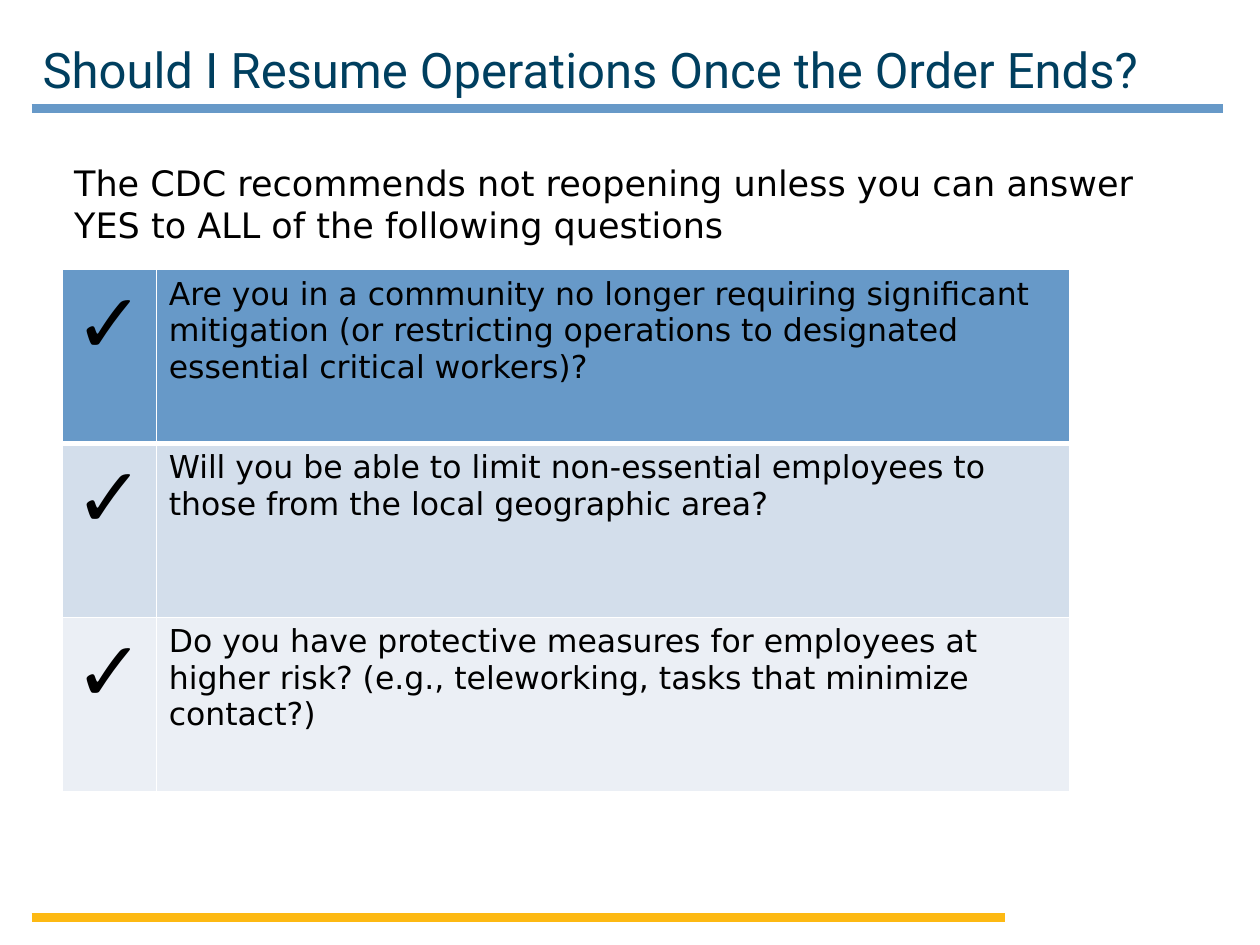
from typing import NamedTuple

from lxml import etree
from pptx import Presentation
from pptx import util as u
from pptx.dml.color import RGBColor
from pptx.enum import shapes, text
from pptx.oxml import ns

BLUE = "6799C8"
GOLD = "FDB913"
NAVY = "003F5F"
BLACK = "000000"
WHITE = "FFFFFF"


class Rule(NamedTuple):
    y: float
    end: float
    color: str


class Check(NamedTuple):
    words: str
    fill: str


RULES = [Rule(0.86, 9.71, BLUE), Rule(7.28, 7.98, GOLD)]
CHECKS = [
    Check("Are you in a community no longer requiring significant mitigation "
          "(or restricting operations to designated essential critical workers)?", BLUE),
    Check("Will you be able to limit non-essential employees to those from "
          "the local geographic area?", "D3DEEB"),
    Check("Do you have protective measures for employees at higher risk? "
          "(e.g., teleworking, tasks that minimize contact?)", "EBEFF5"),
]
COLS = [0.75, 7.25]
ROW = 1.38


def rgb(code: str) -> RGBColor:
    return RGBColor.from_string(code)


def write(frame, words: str, *, size: float, font: str = "DejaVu Sans",
          color: str = BLACK, bold: bool = False, space: float = 1.0) -> None:
    frame.word_wrap = True
    para = frame.paragraphs[0]
    para.line_spacing = space
    run = para.add_run()
    run.text = words
    run.font.size = u.Pt(size)
    run.font.name = font
    run.font.bold = bold
    run.font.color.rgb = rgb(color)


def add_box(slide, left: float, top: float, width: float, height: float):
    box = slide.shapes.add_textbox(*map(u.Inches, (left, top, width, height)))
    return box.text_frame


def add_rule(slide, rule: Rule) -> None:
    line = slide.shapes.add_connector(
        shapes.MSO_CONNECTOR.STRAIGHT, u.Inches(0.25), u.Inches(rule.y),
        u.Inches(rule.end), u.Inches(rule.y))
    line.line.color.rgb = rgb(rule.color)
    line.line.width = u.Pt(5)
    etree.SubElement(line._element.spPr, ns.qn("a:effectLst"))


def edge(cell, top: float, bottom: float) -> None:
    """Give a cell white borders; the sides are one point wide."""
    props = cell._tc.get_or_add_tcPr()
    sides = {"L": 1, "R": 1, "T": top, "B": bottom}
    for spot, (side, width) in enumerate(sides.items()):
        line = etree.Element(ns.qn(f"a:ln{side}"), w=str(u.Pt(width)))
        fill = etree.SubElement(line, ns.qn("a:solidFill"))
        etree.SubElement(fill, ns.qn("a:srgbClr"), val=WHITE)
        props.insert(spot, line)


def add_checks(slide, checks: list[Check]) -> None:
    table = slide.shapes.add_table(
        len(checks), len(COLS), u.Inches(0.49), u.Inches(2.14),
        u.Inches(sum(COLS)), u.Inches(ROW * len(checks))).table
    for col, width in zip(table.columns, COLS):
        col.width = u.Inches(width)
    for num, check in enumerate(checks):
        table.rows[num].height = u.Inches(ROW)
        mark, ask = table.rows[num].cells
        write(mark.text_frame, "✓", size=48, bold=True)
        write(ask.text_frame, check.words, size=18)
        for cell in (mark, ask):
            cell.fill.solid()
            cell.fill.fore_color.rgb = rgb(check.fill)
            edge(cell, top=3 if num == 1 else 1, bottom=3 if num == 0 else 1)


def main() -> None:
    deck = Presentation()
    deck.slide_width, deck.slide_height = u.Inches(10), u.Inches(7.5)
    slide = deck.slides.add_slide(deck.slide_layouts[6])

    for rule in RULES:
        add_rule(slide, rule)

    title = add_box(slide, 0.24, 0.35, 9.26, 0.44)
    title.margin_top = title.margin_right = title.margin_bottom = 0
    title.vertical_anchor = text.MSO_ANCHOR.MIDDLE
    write(title, "Should I Resume Operations Once the Order Ends?",
          size=28, font="Roboto", color=NAVY, space=0.95)

    intro = add_box(slide, 0.49, 1.23, 8.88, 0.77)
    write(intro, "The CDC recommends not reopening unless you can answer "
          "YES to ALL of the following questions", size=20)

    add_checks(slide, CHECKS)
    deck.save("out.pptx")


if __name__ == "__main__":
    main()
